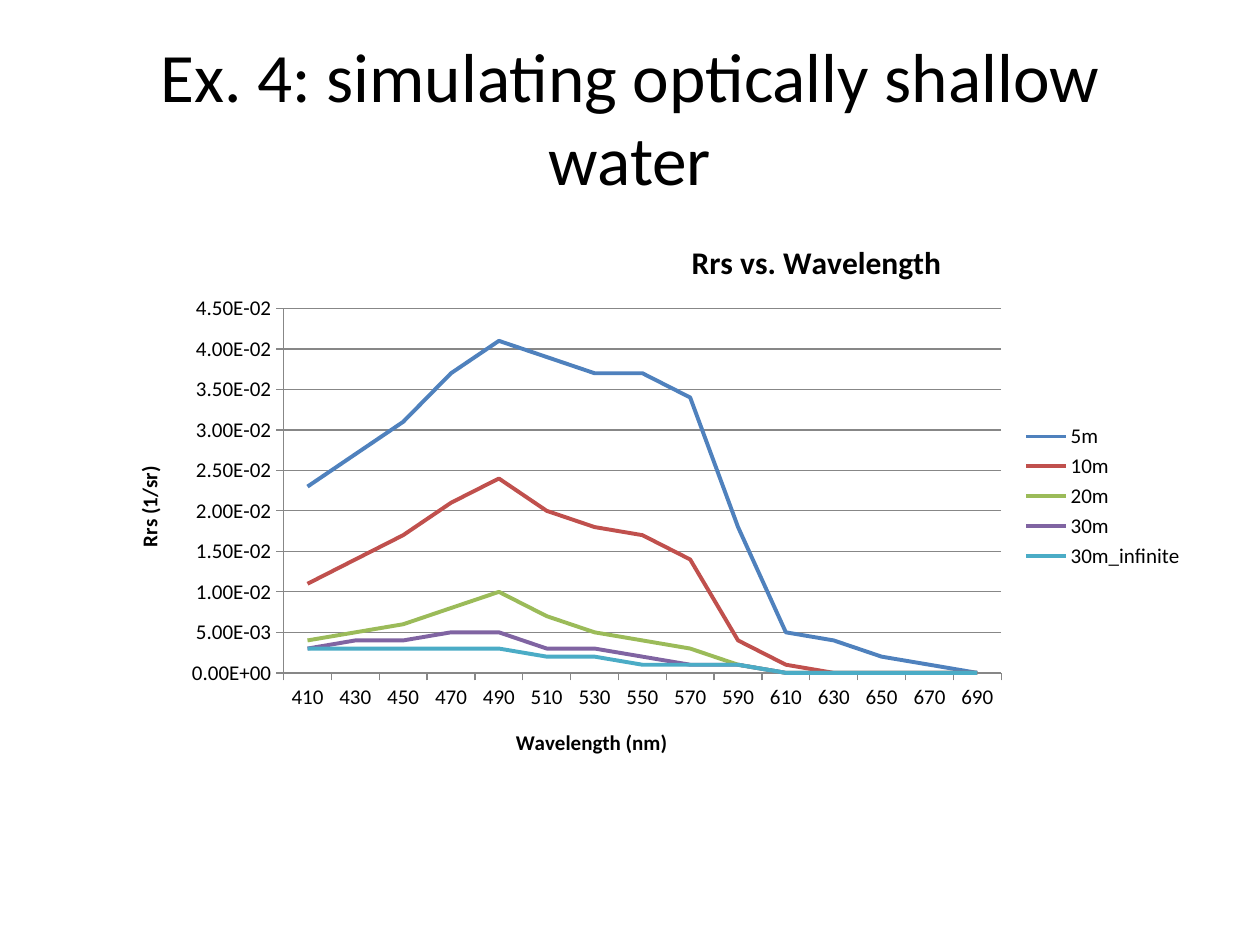
"""Build a slide with a line chart of reflectance against wavelength."""
import pptx
import pptx.chart.data
import pptx.dml.color
import pptx.enum.chart
import pptx.enum.text
import pptx.oxml
import pptx.oxml.ns
import pptx.util
from pptx.util import Inches

RGBColor = pptx.dml.color.RGBColor
BLACK = RGBColor(0, 0, 0)
GREY = RGBColor(0x87, 0x87, 0x87)
BLUE = RGBColor(0x4F, 0x81, 0xBD)
RED = RGBColor(0xC0, 0x50, 0x4D)
GREEN = RGBColor(0x9B, 0xBB, 0x59)
PURPLE = RGBColor(0x80, 0x64, 0xA2)
TEAL = RGBColor(0x4B, 0xAC, 0xC6)
FONT = "Calibri"

TITLE = "Ex. 4: simulating optically shallow water"
WAVES = [str(wave) for wave in range(410, 691, 20)]
DEPTHS = [
    ("5m", BLUE, [0.023, 0.027, 0.031, 0.037, 0.041, 0.039, 0.037, 0.037,
                  0.034, 0.018, 0.005, 0.004, 0.002, 0.001, 0]),
    ("10m", RED, [0.011, 0.014, 0.017, 0.021, 0.024, 0.02, 0.018, 0.017,
                  0.014, 0.004, 0.001, 0, 0, 0, 0]),
    ("20m", GREEN, [0.004, 0.005, 0.006, 0.008, 0.01, 0.007, 0.005, 0.004,
                    0.003, 0.001, 0, 0, 0, 0, 0]),
    ("30m", PURPLE, [0.003, 0.004, 0.004, 0.005, 0.005, 0.003, 0.003, 0.002,
                     0.001, 0.001, 0, 0, 0, 0, 0]),
    ("30m_infinite", TEAL, [0.003, 0.003, 0.003, 0.003, 0.003, 0.002, 0.002,
                            0.001, 0.001, 0.001, 0, 0, 0, 0, 0]),
]


def style(font, size, bold=False):
    font.name, font.size, font.bold = FONT, pptx.util.Pt(size), bold
    font.color.rgb = BLACK


def write(frame, text, size=12, bold=False):
    frame.text = text
    para = frame.paragraphs[0]
    para.alignment = pptx.enum.text.PP_ALIGN.CENTER
    style(para.runs[0].font, size, bold)


def place(node, inner=False, **spots):
    tag = pptx.oxml.ns.qn("c:layout")
    old = node.find(tag)
    target = '<c:layoutTarget val="inner"/>' if inner else ""
    modes = "".join(f'<c:{key}Mode val="edge"/>' for key in "xy")
    sizes = "".join(f'<c:{key} val="{val}"/>' for key, val in spots.items())
    new = pptx.oxml.parse_xml(
        f'<c:layout {pptx.oxml.ns.nsdecls("c")}><c:manualLayout>'
        f"{target}{modes}{sizes}</c:manualLayout></c:layout>")
    if old is not None:
        node.replace(old, new)
    elif inner:
        node.insert(0, new)
    else:
        node.find(pptx.oxml.ns.qn("c:tx")).addnext(new)


def head(slide):
    title = slide.shapes.title
    title.left, title.top = Inches(0.5), Inches(0.3)
    title.width, title.height = Inches(9), Inches(1.25)
    write(title.text_frame, TITLE, size=39.6)
    title.text_frame.word_wrap = True
    title.text_frame.vertical_anchor = pptx.enum.text.MSO_ANCHOR.MIDDLE


def axis(part, text, **spots):
    write(part.axis_title.text_frame, text, bold=True)
    place(part.axis_title._element, **spots)
    style(part.tick_labels.font, 12)
    part.format.line.color.rgb = GREY
    part.major_tick_mark = pptx.enum.chart.XL_TICK_MARK.OUTSIDE


def plot(slide):
    data = pptx.chart.data.CategoryChartData(number_format="0.00E+00")
    data.categories = WAVES
    for name, _, vals in DEPTHS:
        data.add_series(name, vals)
    chart = slide.shapes.add_chart(
        pptx.enum.chart.XL_CHART_TYPE.LINE, Inches(0.87), Inches(1.68),
        Inches(8.63), Inches(4.52), data).chart
    style(chart.font, 10)
    write(chart.chart_title.text_frame, "Rrs vs. Wavelength", size=18, bold=True)
    top = chart.chart_title._element
    place(top, x=0.53, y=0.04)
    top.find(pptx.oxml.ns.qn("c:overlay")).set("val", "1")
    axis(chart.category_axis, "Wavelength (nm)", x=0.37, y=0.9)
    side = chart.value_axis
    axis(side, "Rrs (1/sr)", x=0.02, y=0.44)
    side.minimum_scale, side.maximum_scale, side.major_unit = 0, 0.045, 0.005
    side.tick_labels.number_format = "0.00E+00"
    side.tick_labels.number_format_is_linked = False
    side.major_gridlines.format.line.color.rgb = GREY
    chart.has_legend = True
    chart.legend.position = pptx.enum.chart.XL_LEGEND_POSITION.RIGHT
    chart.legend.include_in_layout = False
    style(chart.legend.font, 12)
    chart.plots[0].vary_by_categories = False
    for line, (_, color, _) in zip(chart.plots[0].series, DEPTHS):
        line.smooth = False
        line.marker.style = pptx.enum.chart.XL_MARKER_STYLE.NONE
        line.format.line.color.rgb = color
        line.format.line.width = pptx.util.Pt(2.25)
    area = chart._chartSpace.chart.plotArea
    place(area, inner=True, x=0.16, y=0.17, w=0.66, h=0.64)


def main():
    deck = pptx.Presentation()
    deck.slide_width, deck.slide_height = Inches(10), Inches(7.5)
    slide = deck.slides.add_slide(deck.slide_layouts[5])
    head(slide)
    plot(slide)
    deck.save("out.pptx")


if __name__ == "__main__":
    main()
